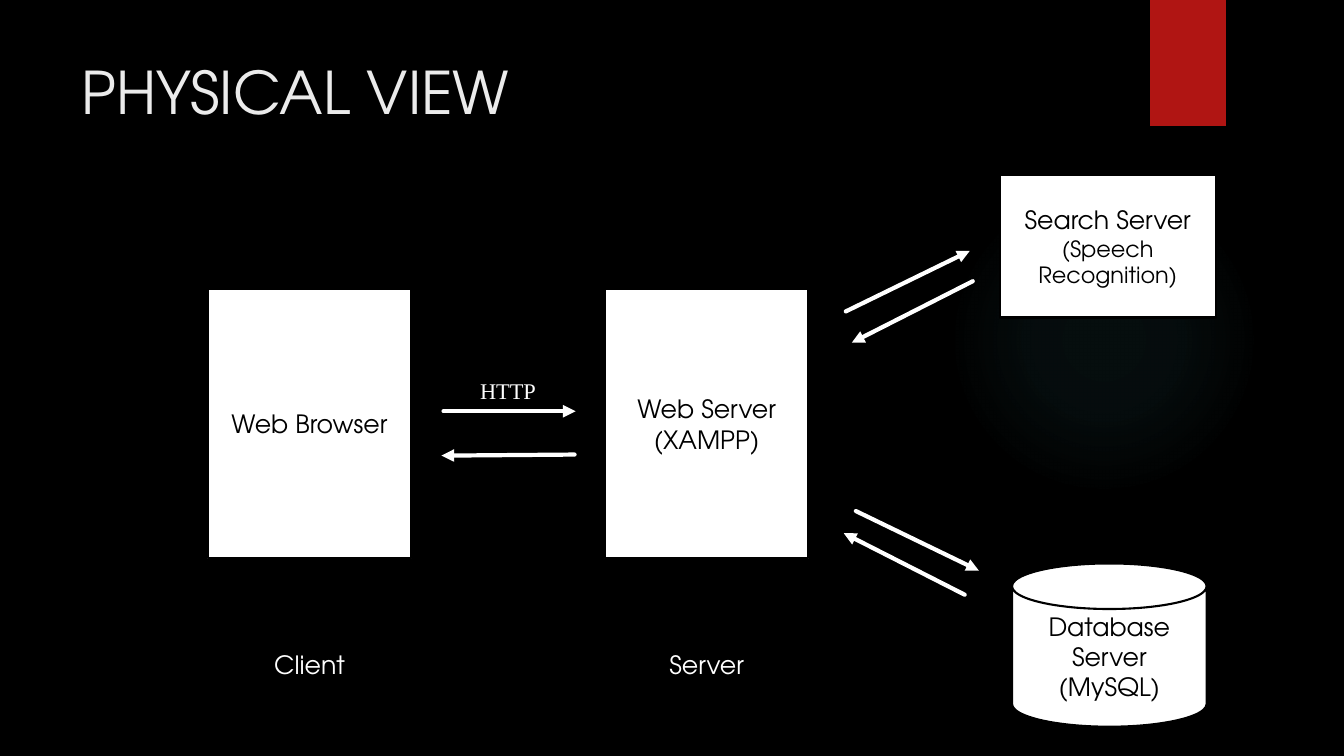
"""Physical view slide: browser, web server and the two back-end servers."""
import pptx
import pptx.util
import pptx.dml.color
import pptx.enum.shapes
import pptx.enum.text
import pptx.oxml
import pptx.oxml.ns
import lxml.etree

COLORS = {"black": "000000", "white": "FFFFFF", "red": "B01513", "title": "EBEBEB", "glow": "50B9C1"}
SHAPES = pptx.enum.shapes.MSO_SHAPE
ANCHORS = pptx.enum.text.MSO_ANCHOR
FONT = "TeX Gyre Adventor"

presentation = pptx.Presentation()
presentation.slide_width = pptx.util.Inches(13.33)
presentation.slide_height = pptx.util.Inches(7.5)
COLUMN = presentation.slide_width / 100
ROW = presentation.slide_height / 100


def place(left, top, width, height):
    """Turn percentages of the slide into lengths."""
    return [round(share * unit) for share, unit in zip((left, top, width, height), (COLUMN, ROW) * 2)]


def write(shape, text, sizes=(18,), color="black", font=FONT, anchor=ANCHORS.MIDDLE,
          align=pptx.enum.text.PP_ALIGN.CENTER, side_inset=0.1):
    """Fill a shape with one paragraph per line of text."""
    frame = shape.text_frame
    frame.text = text
    frame.word_wrap = True
    frame.vertical_anchor = anchor
    frame.margin_left = frame.margin_right = pptx.util.Inches(side_inset)
    for index, paragraph in enumerate(frame.paragraphs):
        paragraph.alignment = align
        for run in paragraph.runs:
            run.font.name = font
            run.font.size = pptx.util.Pt(sizes[min(index, len(sizes) - 1)])
            run.font.color.rgb = pptx.dml.color.RGBColor.from_string(COLORS[color])


slide = presentation.slides.add_slide(presentation.slide_layouts[5])
slide.background.fill.solid()
slide.background.fill.fore_color.rgb = pptx.dml.color.RGBColor.from_string(COLORS["black"])

glow = slide.shapes.add_shape(SHAPES.OVAL, *place(70.58, 24.4, 23.1, 41.07))
glow.shadow.inherit = False
glow.line.fill.background()
glow.fill.background()
stops = "".join(
    f'<a:gs pos="{position}000"><a:srgbClr val="{COLORS["glow"]}"><a:alpha val="{alpha}000"/></a:srgbClr></a:gs>'
    for position, alpha in ((0, 7), (36, 6), (69, 0), (100, 0)))
gradient = pptx.oxml.parse_xml(
    f'<a:gradFill {pptx.oxml.ns.nsdecls("a")}><a:gsLst>{stops}</a:gsLst><a:path path="circle">'
    '<a:fillToRect l="50000" t="50000" r="50000" b="50000"/></a:path></a:gradFill>')
no_fill = glow._element.spPr.find(pptx.oxml.ns.qn("a:noFill"))
glow._element.spPr.replace(no_fill, gradient)

ribbon = slide.shapes.add_shape(SHAPES.RECTANGLE, *place(85.58, 0, 5.63, 16.67))
ribbon.shadow.inherit = False
ribbon.fill.solid()
ribbon.fill.fore_color.rgb = pptx.dml.color.RGBColor.from_string(COLORS["red"])
ribbon.line.fill.background()

title = slide.shapes.title
title.left, title.top, title.width, title.height = place(5.33, 6.67, 77.18, 20.4)
write(title, "PHYSICAL VIEW", sizes=(42,), color="title", anchor=ANCHORS.TOP,
      align=pptx.enum.text.PP_ALIGN.LEFT)

nodes = (
    (SHAPES.RECTANGLE, (15.45, 38.27, 15.15, 35.6), "Web Browser", (18,), 0),
    (SHAPES.RECTANGLE, (45, 38.27, 15.15, 35.6), "Web Server\n(XAMPP)", (18,), 0.1),
    (SHAPES.CAN, (75.3, 74.53, 14.48, 21.6), "Database\nServer (MySQL)", (18,), 0.1),
    (SHAPES.RECTANGLE, (74.4, 23.2, 16.05, 18.8), "Search Server\n(Speech Recognition)", (18, 16), 0.1),
)
for kind, box, text, sizes, side_inset in nodes:
    node = slide.shapes.add_shape(kind, *place(*box))
    node.shadow.inherit = False
    node.fill.solid()
    node.fill.fore_color.rgb = pptx.dml.color.RGBColor.from_string(COLORS["white"])
    node.line.color.rgb = pptx.dml.color.RGBColor.from_string(COLORS["black"])
    node.line.width = pptx.util.Pt(1.5)
    if kind == SHAPES.CAN:
        node.adjustments[0] = 0.279
    write(node, text, sizes=sizes, side_inset=side_inset)

labels = (
    ("Client", (17.18, 85.2, 11.7, 5.33), 18, FONT),
    ("Server", (46.73, 85.2, 11.7, 5.33), 18, FONT),
    ("HTTP", (32.1, 49.2, 11.4, 4.93), 16, "Times New Roman"),
)
for text, box, size, font in labels:
    label = slide.shapes.add_textbox(*place(*box))
    write(label, text, sizes=(size,), color="white", font=font, anchor=ANCHORS.TOP)

arrows = (
    (33, 54.4, 42.83, 54.4),
    (42.75, 60.13, 32.85, 60.27),
    (63.68, 67.6, 72.83, 75.47),
    (71.78, 78.67, 62.78, 70.53),
    (62.93, 41.2, 72.15, 33.2),
    (72.38, 37.2, 63.38, 45.33),
)
for ends in arrows:
    arrow = slide.shapes.add_connector(pptx.enum.shapes.MSO_CONNECTOR.STRAIGHT, *place(*ends))
    arrow.line.color.rgb = pptx.dml.color.RGBColor.from_string(COLORS["white"])
    arrow.line.width = pptx.util.Pt(3)
    outline = arrow.line._get_or_add_ln()
    outline.set("cap", "rnd")
    lxml.etree.SubElement(outline, pptx.oxml.ns.qn("a:tailEnd"), type="triangle")
    lxml.etree.SubElement(arrow._element.spPr, pptx.oxml.ns.qn("a:effectLst"))

presentation.save("out.pptx")
